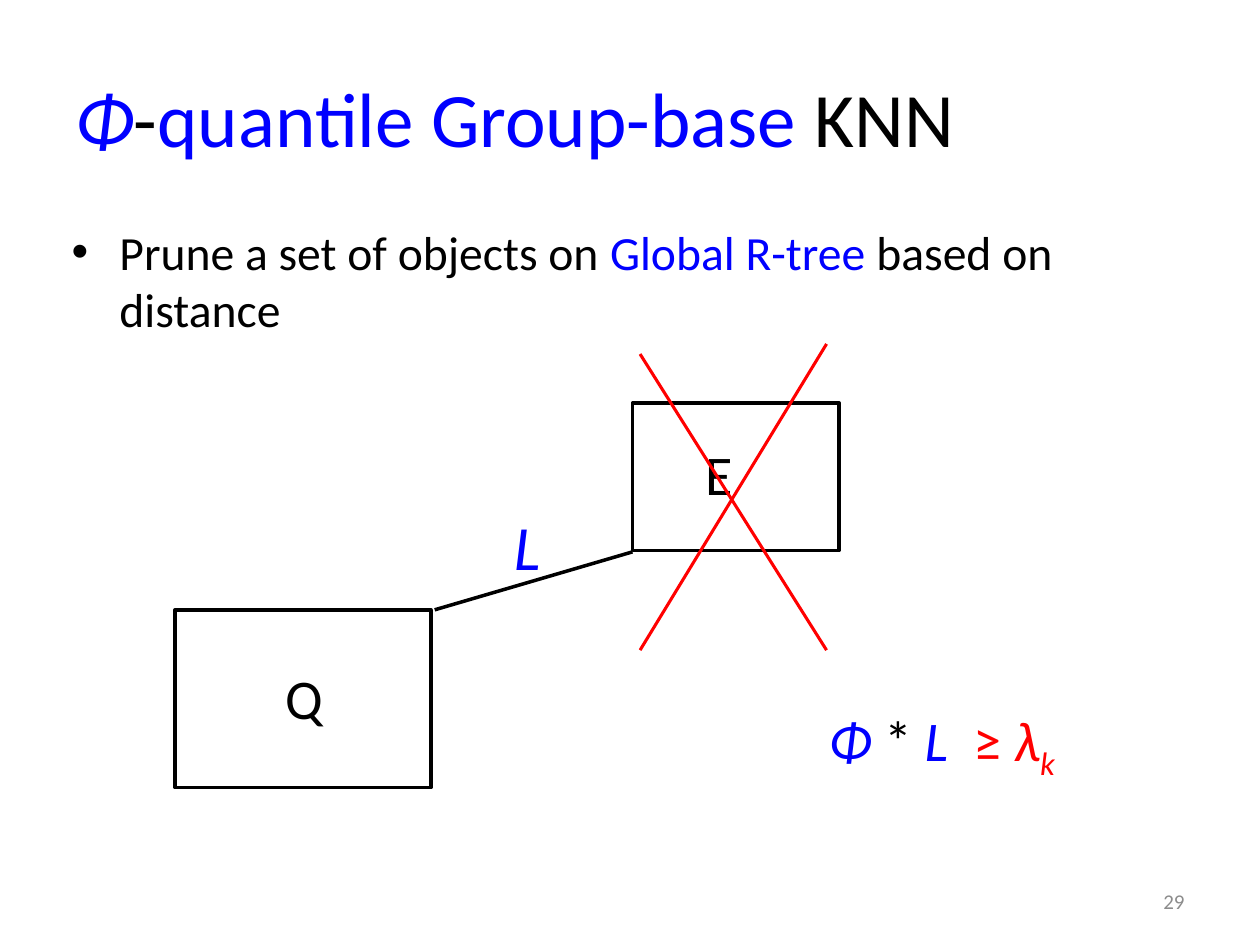
from lxml.etree import SubElement
from pptx import Presentation
from pptx.dml.color import RGBColor
from pptx.enum.shapes import MSO_CONNECTOR, MSO_SHAPE
from pptx.enum.text import MSO_ANCHOR, PP_ALIGN
from pptx.oxml.ns import qn
from pptx.util import Inches, Pt

FONT = "Calibri"
COLORS = {"black": "000000", "blue": "0000FF", "red": "FF0000", "gray": "8C8C8C"}

# Runs: (text, color, style); "i" is italic, "s" is subscript
TITLE = [("Φ", "blue", "i"), ("-", "black", ""),
         ("quantile Group-base ", "blue", ""), ("KNN", "black", "")]
BULLET = [("Prune a set of objects on ", "black", ""),
          ("Global R-tree ", "blue", ""), ("based on distance", "black", "")]
PAGE_NUMBER = [("29", "gray", "")]

# Labels: (runs, size, box)
LABELS = [
    ([("Q", "black", "")], 32, (2.17, 5.22, 0.5, 0.64)),
    ([("Φ ", "blue", "i"), ("*", "black", ""), (" L  ", "blue", "i"),
      ("≥ ", "red", ""), ("λ", "red", "i"), ("k", "red", "is")],
     32, (6.48, 5.55, 2.04, 0.64)),
    ([("E", "black", "")], 32, (5.5, 3.44, 0.42, 0.64)),
    ([("L", "blue", "i")], 36, (3.98, 3.98, 0.41, 0.71)),
]
REGIONS = [(1.39, 4.84, 2.03, 1.41), (5.02, 3.2, 1.64, 1.17)]
# Lines: (start, end, color, width)
DISTANCE = ((3.45, 4.84), (5.02, 4.38), "black", 2)
CROSS = [((5.08, 2.81), (6.56, 5.16), "red", 1.75),
         ((6.56, 2.73), (5.08, 5.16), "red", 1.75)]


def rgb(color):
    return RGBColor.from_string(COLORS[color])


def add_text(slide, runs, size, box, wrap=True, anchor=MSO_ANCHOR.TOP):
    """Add a text box of styled runs and return its paragraph."""
    frame = slide.shapes.add_textbox(*map(Inches, box)).text_frame
    frame.word_wrap = wrap
    frame.vertical_anchor = anchor
    paragraph = frame.paragraphs[0]
    for text, color, style in runs:
        run = paragraph.add_run()
        run.text = text
        run.font.name = FONT
        run.font.size = Pt(size)
        run.font.color.rgb = rgb(color)
        run.font.italic = "i" in style
        if "s" in style:
            run.font._element.set("baseline", "-25000")
    return paragraph


def add_bullet(paragraph, indent):
    properties = paragraph._p.get_or_add_pPr()
    properties.set("marL", str(Inches(indent)))
    properties.set("indent", str(-Inches(indent)))
    SubElement(properties, qn("a:buFont")).set("typeface", "Arial")
    SubElement(properties, qn("a:buChar")).set("char", "•")


def add_region(slide, box):
    region = slide.shapes.add_shape(MSO_SHAPE.RECTANGLE, *map(Inches, box))
    region.shadow.inherit = False
    region.fill.background()
    region.line.color.rgb = rgb("black")
    region.line.width = Pt(2)


def add_line(slide, start, end, color, width):
    line = slide.shapes.add_connector(
        MSO_CONNECTOR.STRAIGHT, *map(Inches, start + end))
    line.line.color.rgb = rgb(color)
    line.line.width = Pt(width)
    SubElement(line._element.spPr, qn("a:effectLst"))


def main():
    presentation = Presentation()
    presentation.slide_width = Inches(10)
    presentation.slide_height = Inches(7.5)
    slide = presentation.slides.add_slide(presentation.slide_layouts[6])

    add_text(slide, TITLE, 44, (0.5, 0.3, 9, 1.25), anchor=MSO_ANCHOR.MIDDLE)
    add_bullet(add_text(slide, BULLET, 27.2, (0.47, 1.72, 9.3, 0.78)), 0.38)
    number = add_text(slide, PAGE_NUMBER, 12, (7.17, 6.95, 2.33, 0.4),
                      anchor=MSO_ANCHOR.MIDDLE)
    number.alignment = PP_ALIGN.RIGHT

    for box in REGIONS:
        add_region(slide, box)
    add_line(slide, *DISTANCE)
    for runs, size, box in LABELS:
        add_text(slide, runs, size, box, wrap=False)
    for stroke in CROSS:
        add_line(slide, *stroke)

    presentation.save("out.pptx")


if __name__ == "__main__":
    main()
